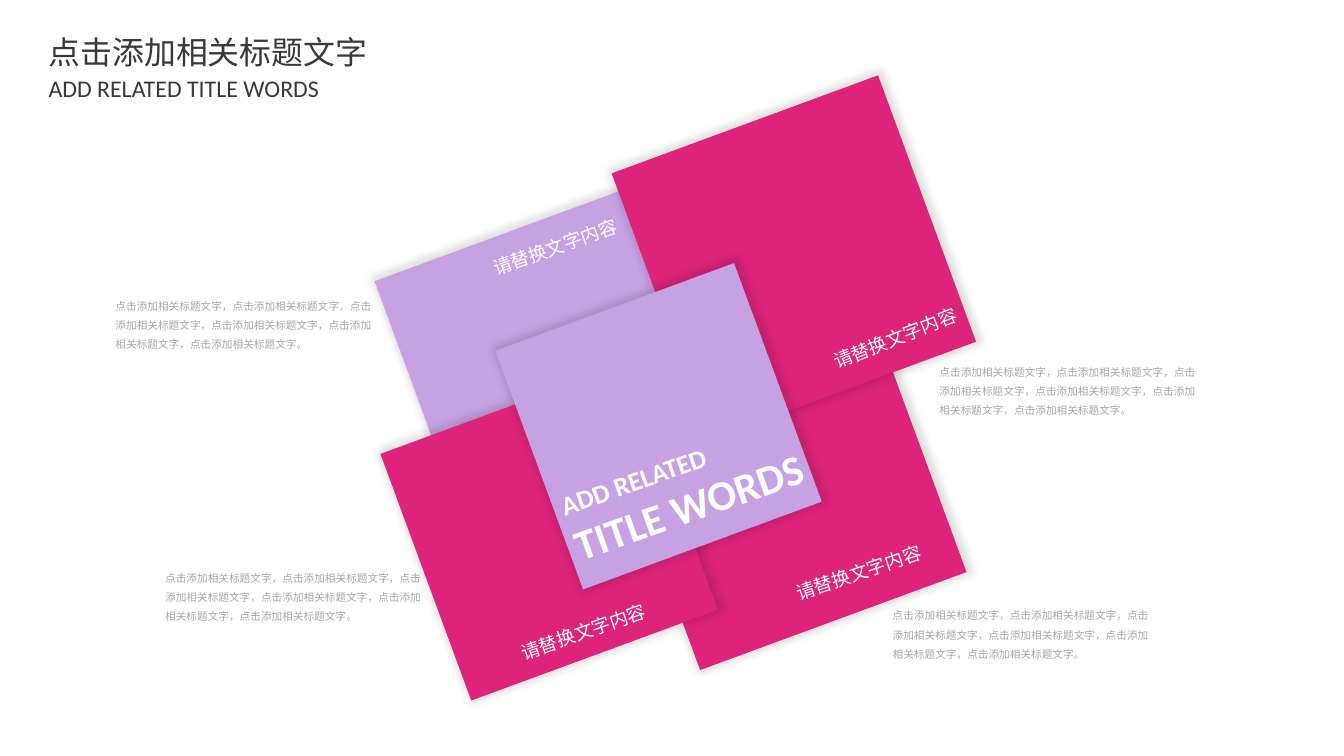
from lxml import etree
from pptx import Presentation
from pptx.dml.color import RGBColor
from pptx.enum import shapes, text
from pptx.oxml import ns
from pptx.util import Inches, Pt

PINK = RGBColor(0xDD, 0x24, 0x7A)
LILAC = RGBColor(0xC7, 0xA2, 0xE3)
WHITE = RGBColor(0xFF, 0xFF, 0xFF)
GRAY = RGBColor(0xA6, 0xA6, 0xA6)
DARK = RGBColor(0x3B, 0x38, 0x38)

CJK_FONT = "Noto Sans CJK SC"
SQUARE_ROTATION = 339.8
BODY = "点击添加相关标题文字，" * 5 + "点击添加相关标题文字。"
LABEL = "请替换文字内容"

SQUARES = [
    (4.36, 2.31, 3.11, LILAC),
    (6.72, 3.62, 2.97, PINK),
    (6.82, 1.21, 2.97, PINK),
    (4.37, 4.19, 2.75, PINK),
    (5.56, 3.13, 2.66, LILAC),
]
LABELS = [
    (8.24, 3.39, 1.91, 338.4),
    (3.99, 2.55, 2.62, 340.5),
    (7.7, 5.86, 2.07, 341.5),
    (4.83, 6.48, 2.06, 340.7),
]
BODIES = [(1.11, 3.02), (1.63, 5.87), (9.73, 3.71), (9.24, 6.26)]


def add_shadow(shape):
    shape.shadow.inherit = False
    effects = shape._element.spPr.find(ns.qn("a:effectLst"))
    shadow = etree.SubElement(
        effects, ns.qn("a:outerShdw"), blurRad=str(Pt(6)), sx="103000",
        sy="103000", algn="ctr", rotWithShape="0")
    color = etree.SubElement(shadow, ns.qn("a:srgbClr"), val="000000")
    etree.SubElement(color, ns.qn("a:alpha"), val="12000")


def add_square(slide, left, top, size, color):
    shape = slide.shapes.add_shape(
        shapes.MSO_SHAPE.RECTANGLE,
        Inches(left), Inches(top), Inches(size), Inches(size))
    shape.rotation = SQUARE_ROTATION
    shape.fill.solid()
    shape.fill.fore_color.rgb = color
    shape.line.fill.background()
    add_shadow(shape)


def add_run(paragraph, words, size, font, color, bold):
    run = paragraph.add_run()
    run.text = words
    run.font.size = Pt(size)
    run.font.name = font
    run.font.bold = bold
    run.font.color.rgb = color
    if font == CJK_FONT:
        east_asian = etree.SubElement(run.font._element, ns.qn("a:ea"))
        east_asian.set("typeface", font)


def add_text(slide, place, lines, font, color, rotation=0, align=None,
             spacing=None, bold=False, wrap=True):
    box = slide.shapes.add_textbox(*[Inches(length) for length in place])
    box.rotation = rotation
    frame = box.text_frame
    frame.word_wrap = wrap
    frame.auto_size = text.MSO_AUTO_SIZE.SHAPE_TO_FIT_TEXT
    for index, (words, size) in enumerate(lines):
        paragraph = frame.add_paragraph() if index else frame.paragraphs[0]
        paragraph.alignment = align
        paragraph.line_spacing = spacing
        add_run(paragraph, words, size, font, color, bold)


def main():
    presentation = Presentation()
    presentation.slide_width = Inches(14.06)
    presentation.slide_height = Inches(7.91)
    slide = presentation.slides.add_slide(presentation.slide_layouts[6])

    for square in SQUARES:
        add_square(slide, *square)
    for left, top, width, rotation in LABELS:
        add_text(slide, (left, top, width, 0.38), [(LABEL, 14)], "Arial", WHITE,
                 rotation, text.PP_ALIGN.RIGHT, 1.2)
    add_text(slide, (5.78, 4.55, 3.28, 0.98),
             [("ADD RELATED", 20), ("TITLE WORDS", 32)],
             "Calibri", WHITE, 340.5, bold=True)
    for left, top in BODIES:
        add_text(slide, (left, top, 2.9, 0.7), [(BODY, 8)], CJK_FONT, GRAY,
                 spacing=1.5)
    add_text(slide, (0.41, 0.29, 3.58, 0.51), [("点击添加相关标题文字", 24)],
             CJK_FONT, DARK, wrap=False)
    add_text(slide, (0.41, 0.72, 3.07, 0.41), [("ADD RELATED TITLE WORDS", 18)],
             "Calibri", DARK, wrap=False)

    presentation.save("out.pptx")


if __name__ == "__main__":
    main()
